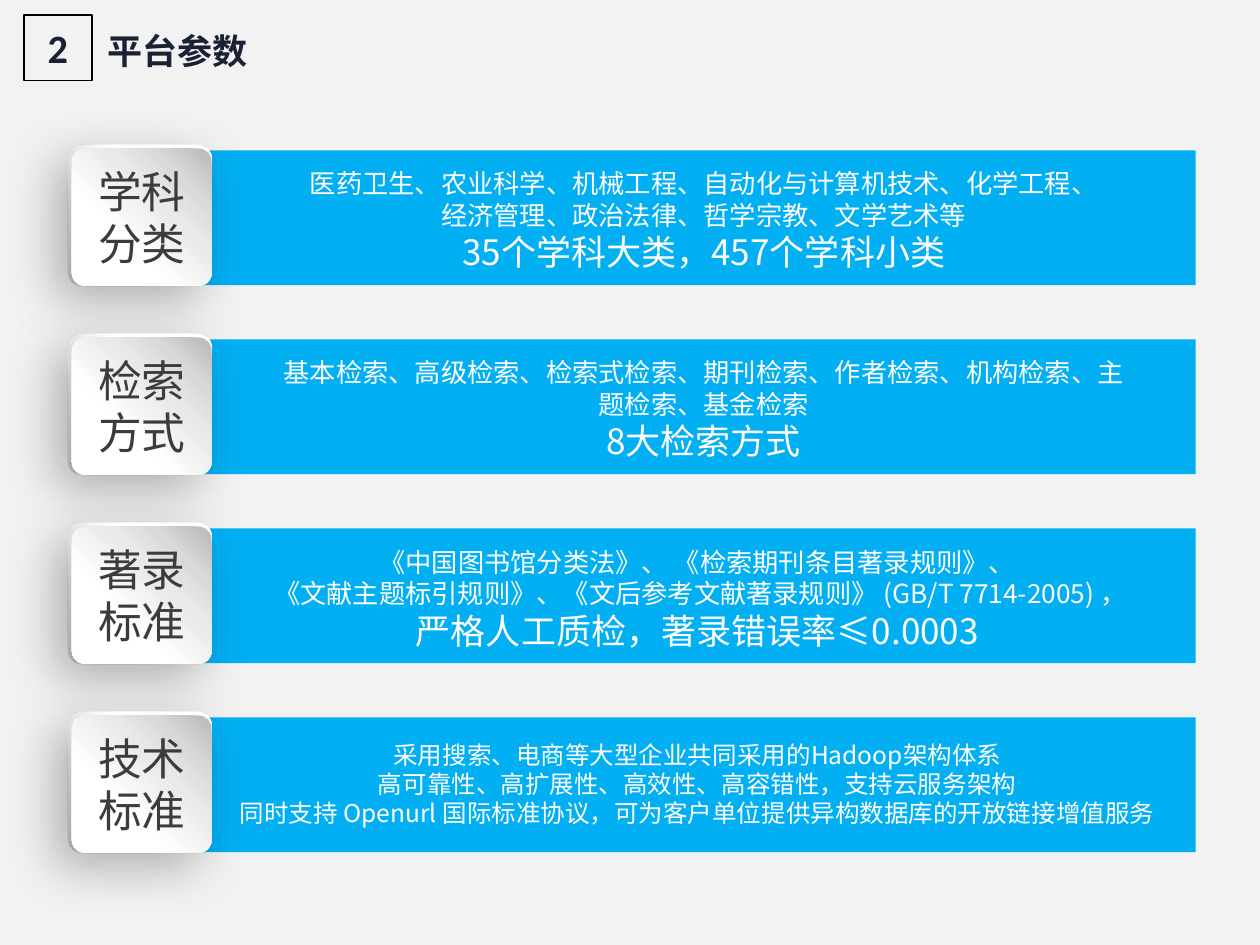
"""Build the platform parameters slide: four labelled bars under a numbered title."""
from lxml import etree
from pptx import Presentation
from pptx.dml.color import RGBColor
from pptx.enum import shapes, text
from pptx.oxml import ns
from pptx.util import Pt

COLORS = {"bg": "F2F2F2", "bar": "02AFF3", "label": "3C3C3C", "title": "1B2135",
          "white": "FFFFFF", "black": "000000"}
CJK = "Noto Sans CJK SC"
CENTER, LEFT = text.PP_ALIGN.CENTER, text.PP_ALIGN.LEFT
MIDDLE, TOP = text.MSO_ANCHOR.MIDDLE, text.MSO_ANCHOR.TOP
FIT, FIXED = text.MSO_AUTO_SIZE.SHAPE_TO_FIT_TEXT, text.MSO_AUTO_SIZE.NONE
RIM = ([(0, "FFFFFF"), (35, "FFFFFF"), (74, "BFBFBF"), (100, "A6A6A6")], ("l", "b"))
FACE = ([(0, "FFFFFF"), (35, "FFFFFF"), (63, "E9E9E9"), (79, "D9D9D9"), (95, "BFBFBF")],
        ("t", "r"))
WIDE, NARROW = (122.4, 552.24), (150.48, 503.28)
ROWS = [
    ("学科分类", NARROW, 9.4, [
        ("医药卫生、农业科学、机械工程、自动化与计算机技术、化学工程、", 15),
        ("经济管理、政治法律、哲学宗教、文学艺术等", 15),
        ("35个学科大类，457个学科小类", 20)]),
    ("检索方式", NARROW, 9.4, [
        ("基本检索、高级检索、检索式检索、期刊检索、作者检索、机构检索、主题检索、基金检索", 15),
        ("8大检索方式", 20)]),
    ("著录标准", WIDE, 9.8, [
        ("《中国图书馆分类法》、 《检索期刊条目著录规则》、", 15),
        (" 《文献主题标引规则》、《文后参考文献著录规则》 (GB/T 7714-2005) ，", 15),
        ("严格人工质检，著录错误率≤0.0003", 20)]),
    ("技术标准", WIDE, 12.24, [
        ("采用搜索、电商等大型企业共同采用的Hadoop架构体系", 14),
        ("高可靠性、高扩展性、高效性、高容错性，支持云服务架构", 14),
        ("同时支持 Openurl 国际标准协议，可为客户单位提供异构数据库的开放链接增值服务", 14)]),
]


def write(sp, lines, color, align=CENTER, anchor=MIDDLE, fit=FIXED, bold=False, font=CJK):
    tf = sp.text_frame
    frame = {"word_wrap": True, "auto_size": fit, "vertical_anchor": anchor,
             "margin_left": Pt(7.2), "margin_right": Pt(7.2),
             "margin_top": Pt(3.6), "margin_bottom": Pt(3.6)}
    for key, value in frame.items():
        setattr(tf, key, value)
    for i, (line, size) in enumerate(lines):
        p = tf.add_paragraph() if i else tf.paragraphs[0]
        p.alignment = align
        r = p.add_run()
        r.text = line
        for key, value in {"size": Pt(size), "name": font, "bold": bold}.items():
            setattr(r.font, key, value)
        r.font.color.rgb = RGBColor.from_string(COLORS[color])
        etree.SubElement(r.font._element, ns.qn("a:ea"), typeface=font)


def add_box(parent, kind, left, top, width, height, fill=None, gradient=None):
    sp = parent.add_shape(kind, Pt(left), Pt(top), Pt(width), Pt(height))
    sp.shadow.inherit = False
    sp.line.fill.background()
    sp.fill.background()
    if fill:
        sp.fill.solid()
        sp.fill.fore_color.rgb = RGBColor.from_string(COLORS[fill])
    if gradient:
        stops, sides = gradient
        grad = etree.Element(ns.qn("a:gradFill"), rotWithShape="1")
        gs_list = etree.SubElement(grad, ns.qn("a:gsLst"))
        for pos, color in stops:
            gs = etree.SubElement(gs_list, ns.qn("a:gs"), pos=str(pos * 1000))
            etree.SubElement(gs, ns.qn("a:srgbClr"), val=color)
        circle = etree.SubElement(grad, ns.qn("a:path"), path="circle")
        etree.SubElement(circle, ns.qn("a:fillToRect"), {side: "100000" for side in sides})
        sp_pr = sp._element.spPr
        sp_pr.replace(sp_pr.find(ns.qn("a:noFill")), grad)
        sp.adjustments[0] = 0.097
    return sp


prs = Presentation()
prs.slide_width, prs.slide_height = Pt(720), Pt(540)
s = prs.slides.add_slide(prs.slide_layouts[5])
s.background.fill.solid()
s.background.fill.fore_color.rgb = RGBColor.from_string(COLORS["bg"])

title = s.shapes.title
for key, value in {"left": 54, "top": 11.52, "width": 155.52, "height": 32.4}.items():
    setattr(title, key, Pt(value))
write(title, [("平台参数", 20)], "title", align=LEFT, fit=FIT, bold=True)
title.text_frame.paragraphs[0].line_spacing = 1.1

RECT, ROUND = shapes.MSO_SHAPE.RECTANGLE, shapes.MSO_SHAPE.ROUNDED_RECTANGLE
number = add_box(s.shapes, RECT, 13.68, 8.64, 38.88, 37.44)
number.line.color.rgb = RGBColor.from_string(COLORS["black"])
number.line.width = Pt(0.75)
write(number, [("2", 23)], "title", bold=True, font="Calibri")

for i, (name, (left, width), offset, lines) in enumerate(ROWS):
    top = 82.8 + 108 * i
    row = s.shapes.add_group_shape().shapes
    add_box(row, RECT, 113.76, top + 3.2, 569.52, 77.04, fill="bar")

    rim = add_box(row, ROUND, 38.88, top, 82.08, 80.64, gradient=RIM)
    effects = rim._element.spPr.find(ns.qn("a:effectLst"))
    shadow = etree.SubElement(effects, ns.qn("a:outerShdw"), blurRad=str(Pt(29)),
                              dist=str(Pt(11)), dir=str(133 * 60000), rotWithShape="0")
    tint = etree.SubElement(shadow, ns.qn("a:srgbClr"), val=COLORS["black"])
    etree.SubElement(tint, ns.qn("a:alpha"), val="27000")

    face = add_box(row, ROUND, 41.04, top + 2, 79.92, 78.48, gradient=FACE)
    write(face, [(name, 25)], "label")

    body = row.add_textbox(Pt(left), Pt(top + offset), Pt(width), Pt(67.68 if i < 3 else 58.32))
    write(body, lines, "white", anchor=TOP, fit=FIT)

prs.save("out.pptx")
